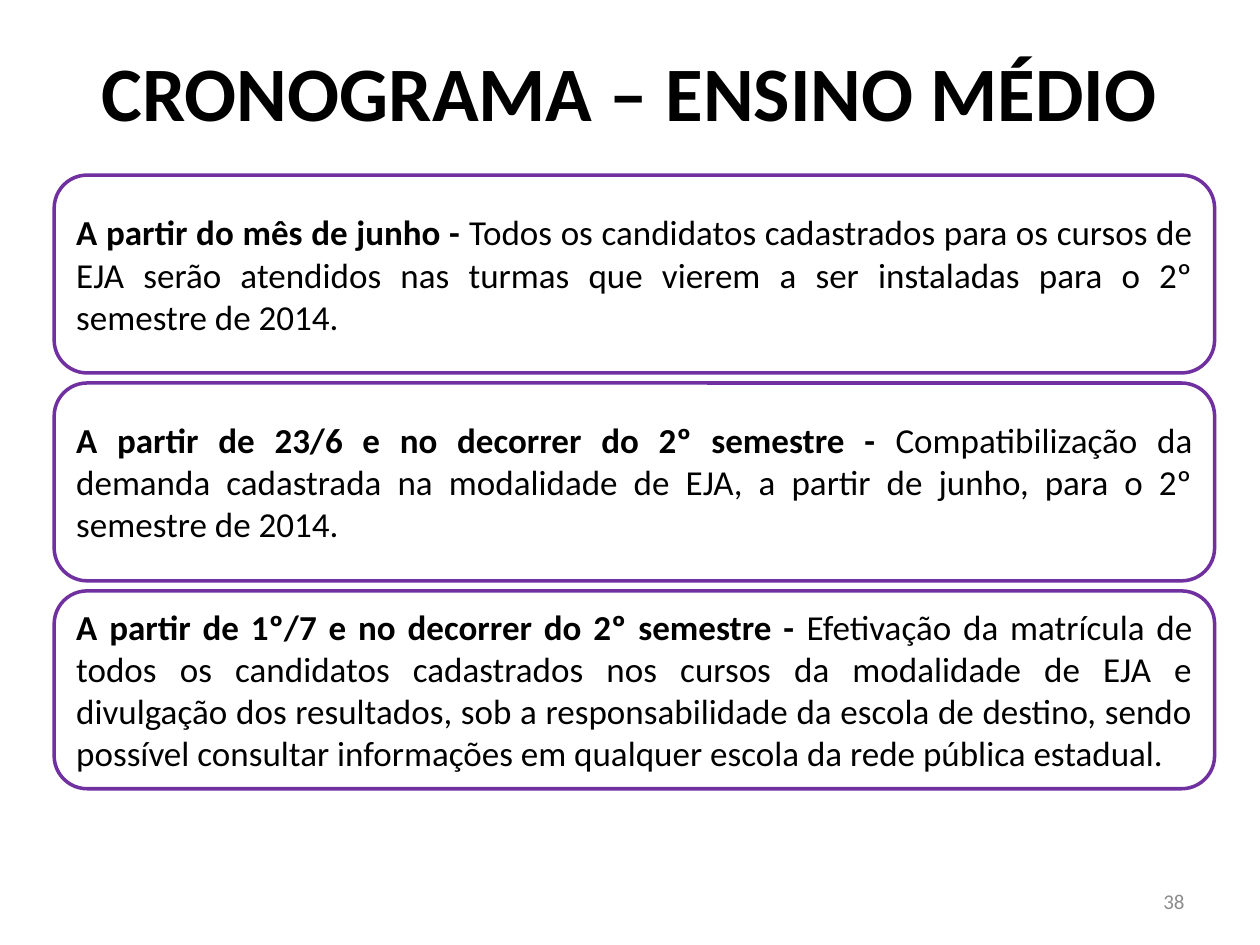
"""Build the high-school enrolment schedule slide."""
from dataclasses import dataclass

from pptx import Presentation
from pptx.dml.color import RGBColor
from pptx.enum.shapes import MSO_SHAPE as Shape
from pptx.enum.text import MSO_ANCHOR as Anchor, PP_ALIGN as Align
from pptx.util import Inches, Pt

TITLE = "CRONOGRAMA – ENSINO MÉDIO"
PAGE_NUMBER = "38"
STAGES = [
    ("A partir do mês de junho - ",
     "Todos os candidatos cadastrados para os cursos de EJA serão atendidos "
     "nas turmas que vierem a ser instaladas para o 2º semestre de 2014."),
    ("A partir de 23/6 e no decorrer do 2º semestre - ",
     "Compatibilização da demanda cadastrada na modalidade de EJA, a partir "
     "de junho, para o 2º semestre de 2014."),
    ("A partir de 1º/7 e no decorrer do 2º semestre - ",
     "Efetivação da matrícula de todos os candidatos cadastrados nos cursos "
     "da modalidade de EJA e divulgação dos resultados, sob a "
     "responsabilidade da escola de destino, sendo possível consultar "
     "informações em qualquer escola da rede pública estadual."),
]


@dataclass(frozen=True)
class Theme:
    font: str = "Calibri"
    ink: RGBColor = RGBColor(0, 0, 0)
    muted: RGBColor = RGBColor(0x8C, 0x8C, 0x8C)
    outline: RGBColor = RGBColor(0x70, 0x30, 0xA0)
    title_size: int = 44
    body_size: int = 20
    number_size: int = 12


THEME = Theme()
STAGE_LEFT, STAGE_TOP, STAGE_WIDTH, STAGE_HEIGHT = 0.43, 1.39, 9.21, 1.57
STAGE_PITCH = 1.65


def place(shape, left, top, width, height):
    shape.left, shape.top = Inches(left), Inches(top)
    shape.width, shape.height = Inches(width), Inches(height)


def write(shape, spans, size, color, align, anchor):
    frame = shape.text_frame
    frame.word_wrap = True
    frame.vertical_anchor = anchor
    para = frame.paragraphs[0]
    para.alignment = align
    para.font.name = THEME.font
    para.font.size = Pt(size)
    para.font.color.rgb = color
    for text, bold in spans:
        span = para.add_run()
        span.text = text
        span.font.bold = bold


def add_stage(page, index, period, action):
    top = STAGE_TOP + index * STAGE_PITCH
    box = page.shapes.add_shape(
        Shape.ROUNDED_RECTANGLE, Inches(STAGE_LEFT), Inches(top),
        Inches(STAGE_WIDTH), Inches(STAGE_HEIGHT))
    box.shadow.inherit = False
    box.fill.background()
    box.line.color.rgb = THEME.outline
    box.line.width = Pt(2)
    write(box, [(period, True), (action, False)], THEME.body_size,
          THEME.ink, Align.JUSTIFY, Anchor.MIDDLE)


def main():
    deck = Presentation()
    deck.slide_width, deck.slide_height = Inches(10), Inches(7.5)
    page = deck.slides.add_slide(deck.slide_layouts[5])

    title = page.shapes.title
    place(title, 0, 0.3, 10, 1.25)
    write(title, [(TITLE, True)], THEME.title_size, THEME.ink,
          Align.CENTER, Anchor.TOP)

    for index, (period, action) in enumerate(STAGES):
        add_stage(page, index, period, action)

    number = page.shapes.add_textbox(
        Inches(7.17), Inches(6.95), Inches(2.33), Inches(0.4))
    write(number, [(PAGE_NUMBER, False)], THEME.number_size, THEME.muted,
          Align.RIGHT, Anchor.MIDDLE)

    deck.save("out.pptx")


if __name__ == "__main__":
    main()
